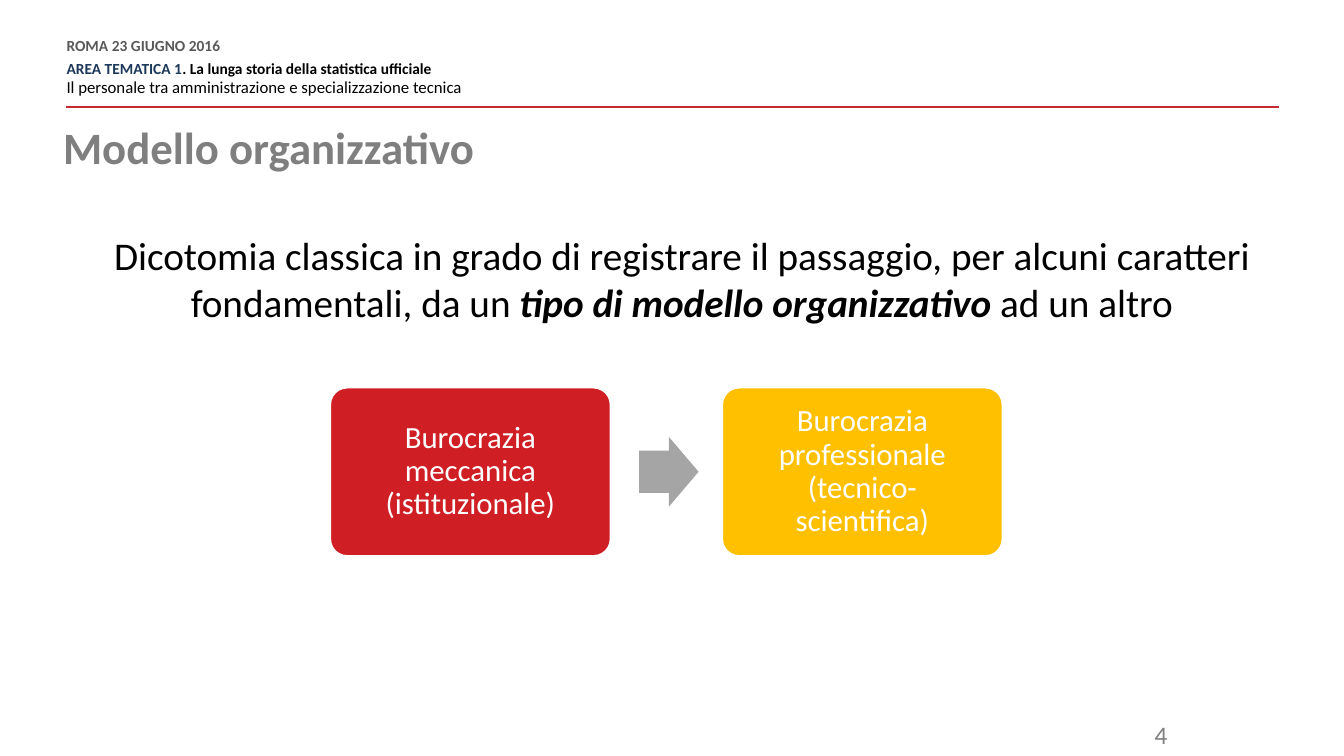
from pptx import Presentation
from pptx.dml.color import RGBColor
from pptx.enum import shapes, text
from pptx.oxml.ns import qn
from pptx.util import Pt
from lxml import etree

WHITE = RGBColor(0xFF, 0xFF, 0xFF)
BLACK = RGBColor(0, 0, 0)
RED = RGBColor(0xCF, 0x1E, 0x24)
YELLOW = RGBColor(0xFF, 0xC0, 0)
RULE_RED = RGBColor(0xC7, 0x2A, 0x31)
NAVY = RGBColor(0x1C, 0x38, 0x5A)
DARK_GRAY = RGBColor(0x59, 0x59, 0x59)
GRAY = RGBColor(0x7F, 0x7F, 0x7F)
LIGHT_GRAY = RGBColor(0xA5, 0xA5, 0xA5)

LEFT, CENTER, RIGHT = text.PP_ALIGN.LEFT, text.PP_ALIGN.CENTER, text.PP_ALIGN.RIGHT
TOP, MIDDLE = text.MSO_ANCHOR.TOP, text.MSO_ANCHOR.MIDDLE


def add_run(p, content, size=12, color=BLACK, bold=False, italic=False, font="Calibri"):
    r = p.add_run()
    r.text = content
    r.font.name, r.font.size = font, Pt(size)
    r.font.bold, r.font.italic = bold, italic
    r.font.color.rgb = color


class SlideBuilder:
    def __init__(self, slide):
        self.s = slide

    def frame(self, sp, inset=(7.2, 3.6), anchor=TOP):
        tf = sp.text_frame
        tf.word_wrap = True
        tf.auto_size = text.MSO_AUTO_SIZE.NONE
        tf.vertical_anchor = anchor
        tf.margin_left = tf.margin_right = Pt(inset[0])
        tf.margin_top = tf.margin_bottom = Pt(inset[1])
        return tf

    def fill_text(self, tf, paragraphs):
        """Fill the frame from (paragraph format, runs) pairs; a run is (text, font format)."""
        for i, (layout, runs) in enumerate(paragraphs):
            p = tf.add_paragraph() if i else tf.paragraphs[0]
            p.alignment = layout.get("alignment", LEFT)
            p.line_spacing = layout.get("line_spacing")
            p.space_before = layout.get("space_before")
            p.space_after = layout.get("space_after")
            for content, fmt in runs:
                add_run(p, content, **fmt)

    def title(self, content, x, y, w, h):
        sp = self.s.shapes.title
        sp.left, sp.top, sp.width, sp.height = map(Pt, (x, y, w, h))
        self.fill_text(self.frame(sp, (0, 0)), [
            (dict(line_spacing=0.9),
             [(content, dict(size=32, color=GRAY, bold=True))])])

    def text_box(self, paragraphs, x, y, w, h, **frame):
        sp = self.s.shapes.add_textbox(*map(Pt, (x, y, w, h)))
        self.fill_text(self.frame(sp, **frame), paragraphs)

    def rule(self, x1, x2, y):
        line = self.s.shapes.add_connector(
            shapes.MSO_CONNECTOR.STRAIGHT, Pt(x1), Pt(y), Pt(x2), Pt(y))
        line.line.color.rgb, line.line.width = RULE_RED, Pt(2)
        etree.SubElement(line._element.spPr, qn("a:effectLst"))

    def shape(self, kind, x, y, w, h, fill, adjustments):
        sp = self.s.shapes.add_shape(kind, *map(Pt, (x, y, w, h)))
        sp.shadow.inherit = False
        sp.fill.solid()
        sp.fill.fore_color.rgb = fill
        sp.line.fill.background()
        for i, value in enumerate(adjustments):
            sp.adjustments[i] = value
        return sp

    def model_box(self, content, x, y, w, h, fill):
        sp = self.shape(shapes.MSO_SHAPE.ROUNDED_RECTANGLE, x, y, w, h, fill, [0.1])
        sp.line.color.rgb, sp.line.width = WHITE, Pt(1)
        self.fill_text(self.frame(sp, (10, 10), MIDDLE), [
            (dict(alignment=CENTER, line_spacing=0.9),
             [(content, dict(size=22, color=WHITE))])])

    def arrow(self, x, y, w, h):
        self.shape(shapes.MSO_SHAPE.RIGHT_ARROW, x, y, w, h, LIGHT_GRAY, [0.6, 0.5])


def main():
    prs = Presentation()
    prs.slide_width, prs.slide_height = Pt(960), Pt(540)
    b = SlideBuilder(prs.slides.add_slide(prs.slide_layouts[5]))

    b.rule(47.5, 913.5, 76.5)
    tight = dict(line_spacing=Pt(10.8))
    b.text_box([
        (dict(tight, space_after=Pt(6)),
         [("ROMA 23 GIUGNO 2016", dict(size=11, color=DARK_GRAY, bold=True))]),
        (tight,
         [("AREA TEMATICA 1", dict(size=11, color=NAVY, bold=True)),
          (". La lunga storia della statistica ufficiale", dict(size=11, bold=True))]),
        (dict(tight, space_before=Pt(3), space_after=Pt(6)),
         [("Il personale tra amministrazione e specializzazione tecnica", {})]),
    ], 47.5, 28, 600, 42.5, inset=(0, 0))

    b.title("Modello organizzativo", 45, 90, 872, 41)
    b.text_box([(dict(alignment=CENTER), [
        ("Dicotomia classica in grado di registrare il passaggio, per alcuni caratteri "
         "fondamentali, da un ", dict(size=28)),
        ("tipo di modello organizzativo ", dict(size=28, bold=True, italic=True)),
        ("ad un altro", dict(size=28)),
    ])], 45, 161.5, 884, 75)

    box_x, box_y, box_w, box_h, pitch = 236, 277, 200, 120, 280
    models = [("Burocrazia meccanica (istituzionale)", RED),
              ("Burocrazia professionale (tecnico-scientifica)", YELLOW)]
    for i, (name, fill) in enumerate(models):
        b.model_box(name, box_x + i * pitch, box_y, box_w, box_h, fill)
    arrow_w, arrow_h = 42.5, 50
    b.arrow(456.5, box_y + (box_h - arrow_h) / 2, arrow_w, arrow_h)

    b.text_box([(dict(alignment=RIGHT), [("4", dict(size=18, color=GRAY))])],
               784, 510.5, 57, 25)
    prs.save("out.pptx")


if __name__ == "__main__":
    main()
